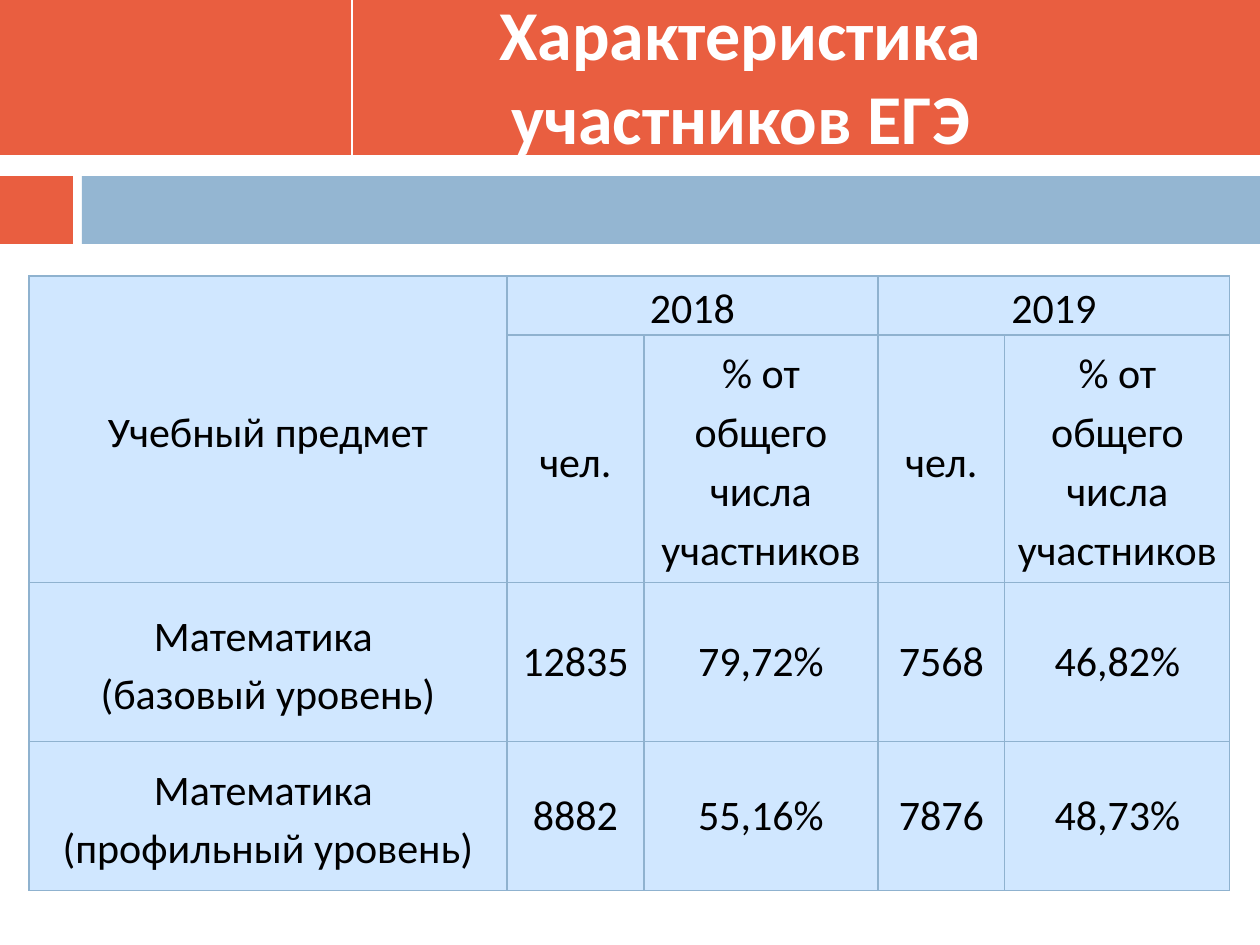
from lxml import etree
from pptx import Presentation
from pptx.dml.color import RGBColor
from pptx.enum.shapes import MSO_CONNECTOR, MSO_SHAPE
from pptx.enum.text import MSO_ANCHOR, MSO_AUTO_SIZE, PP_ALIGN
from pptx.oxml.ns import qn
from pptx.util import Pt

RECTANGLE = MSO_SHAPE.RECTANGLE
STRAIGHT = MSO_CONNECTOR.STRAIGHT
CENTER = PP_ALIGN.CENTER
TOP, MIDDLE = MSO_ANCHOR.TOP, MSO_ANCHOR.MIDDLE
NO_AUTOFIT = MSO_AUTO_SIZE.NONE
TITLE_ONLY = 5

PX_PER_INCH = 126
FONT = "Calibri"
WHITE, BLACK = "FFFFFF", "000000"
ORANGE, BLUE = "E95E40", "94B6D2"
CELL_FILL, CELL_BORDER = "D0E7FF", "8FB2CF"

COLUMN_WIDTHS = [478, 137, 234, 127, 225]
ROW_HEIGHTS = [49, 248, 159, 149]
SHARE = "% от общего числа участников"
HEADER_ROWS = [
    ["Учебный предмет", "2018", None, "2019", None],
    [None, "чел.", SHARE, "чел.", SHARE],
]
DATA_ROWS = [
    ["Математика \n(базовый уровень)", "12835", "79,72%", "7568", "46,82%"],
    ["Математика \n(профильный уровень)", "8882", "55,16%", "7876", "48,73%"],
]
# First row, first column, last row, last column
MERGES = [(0, 0, 1, 0), (0, 1, 0, 2), (0, 3, 0, 4)]


def px(value):
    return round(value * 914400 / PX_PER_INCH)


def color(hex_string):
    return RGBColor.from_string(hex_string)


def add_run(paragraph, text, size, hex_string, bold=False):
    run = paragraph.add_run()
    run.text = text
    run.font.name = FONT
    run.font.size = Pt(size)
    run.font.bold = bold
    run.font.color.rgb = color(hex_string)


def add_bar(slide, left, top, width, height, hex_string):
    bar = slide.shapes.add_shape(RECTANGLE, px(left), px(top), px(width), px(height))
    bar.shadow.inherit = False
    bar.fill.solid()
    bar.fill.fore_color.rgb = color(hex_string)
    bar.line.fill.background()


def add_header(slide, left, top, width, height):
    # Title band, white gap and the two-colour strip
    add_bar(slide, left, top, width, height, ORANGE)
    add_bar(slide, left, top + 170, width, 44, WHITE)
    add_bar(slide, left, top + 176, 73, 68, ORANGE)
    add_bar(slide, left + 82, top + 176, width - 82, 68, BLUE)

    # Divider
    x = px(left + 352)
    divider = slide.shapes.add_connector(STRAIGHT, x, px(top), x, px(top + height))
    divider.line.color.rgb = color(WHITE)
    divider.line.width = Pt(1.5)
    etree.SubElement(divider._element.spPr, qn("a:effectLst"))

    # Title, brought in front of the band
    title = slide.shapes.title
    title.element.getparent().append(title.element)
    title.left, title.top = px(left + 382), px(top + 6)
    title.width, title.height = px(717), px(136)
    frame = title.text_frame
    frame.word_wrap = True
    frame.auto_size = NO_AUTOFIT
    frame.vertical_anchor = MIDDLE
    paragraph = frame.paragraphs[0]
    paragraph.alignment = CENTER
    add_run(paragraph, "Характеристика участников ЕГЭ", 40, WHITE, bold=True)


def add_borders(cell):
    properties = cell._tc.get_or_add_tcPr()
    for side in ("a:lnL", "a:lnR", "a:lnT", "a:lnB"):
        line = etree.SubElement(properties, qn(side), w=str(Pt(0.75)))
        fill = etree.SubElement(line, qn("a:solidFill"))
        etree.SubElement(fill, qn("a:srgbClr"), val=CELL_BORDER)


def format_cell(cell, anchor):
    add_borders(cell)
    cell.fill.solid()
    cell.fill.fore_color.rgb = color(CELL_FILL)
    cell.margin_left = cell.margin_right = px(9)
    cell.margin_top = cell.margin_bottom = 0
    cell.vertical_anchor = anchor


def fill_cell(cell, text, line_spacing):
    frame = cell.text_frame
    for index, line in enumerate(text.split("\n")):
        paragraph = frame.add_paragraph() if index else frame.paragraphs[0]
        paragraph.alignment = CENTER
        paragraph.line_spacing = line_spacing
        add_run(paragraph, line, 24, BLACK)


def add_participants_table(slide, left, top):
    rows = HEADER_ROWS + DATA_ROWS
    table = slide.shapes.add_table(
        len(rows), len(COLUMN_WIDTHS), px(left), px(top),
        px(sum(COLUMN_WIDTHS)), px(sum(ROW_HEIGHTS))).table
    table.first_row = table.horz_banding = False
    for column, width in zip(table.columns, COLUMN_WIDTHS):
        column.width = px(width)
    for row, height in zip(table.rows, ROW_HEIGHTS):
        row.height = px(height)

    for first_row, first_column, last_row, last_column in MERGES:
        table.cell(first_row, first_column).merge(table.cell(last_row, last_column))

    for row_index, texts in enumerate(rows):
        for column_index, text in enumerate(texts):
            cell = table.cell(row_index, column_index)
            is_year = row_index == 0 and column_index > 0
            format_cell(cell, TOP if is_year else MIDDLE)
            if text:
                is_label = row_index < len(HEADER_ROWS) or column_index == 0
                fill_cell(cell, text, 1.15 if is_label else 1.0)


def main():
    presentation = Presentation()
    presentation.slide_width, presentation.slide_height = px(1260), px(945)
    slide = presentation.slides.add_slide(presentation.slide_layouts[TITLE_ONLY])
    add_header(slide, 0, 0, 1260, 155)
    add_participants_table(slide, 29, 276)
    presentation.save("out.pptx")


if __name__ == "__main__":
    main()
